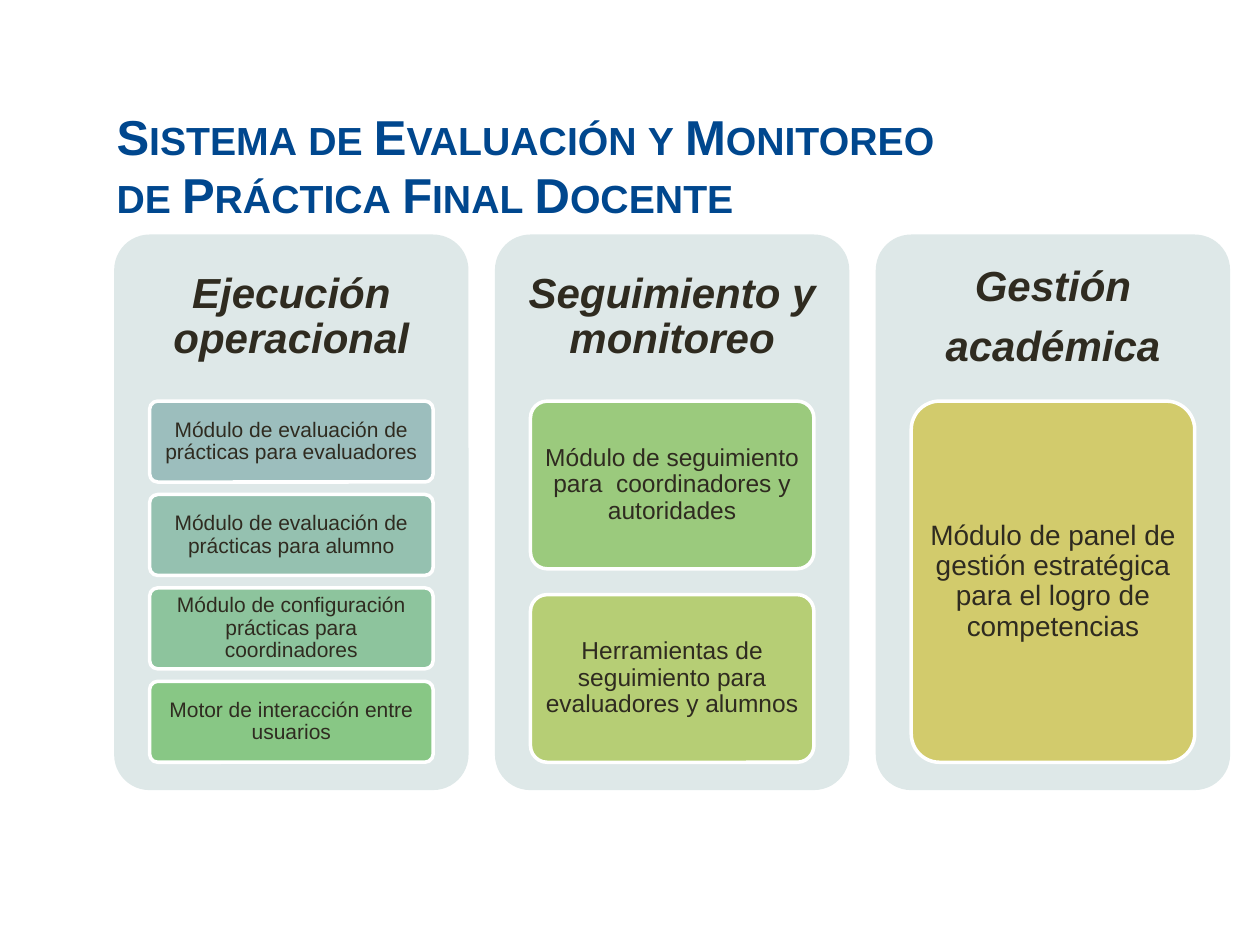
from pptx import Presentation
from pptx.dml.color import RGBColor
from pptx.enum.shapes import MSO_SHAPE
from pptx.enum.text import MSO_ANCHOR, PP_ALIGN
from pptx.util import Pt

BLUE = RGBColor(0x00, 0x47, 0x8E)
DARK = RGBColor(0x2F, 0x2B, 0x20)
PALE = RGBColor(0xDE, 0xE8, 0xE8)
WHITE = RGBColor(0xFF, 0xFF, 0xFF)

CARD_LEFT, CARD_TOP, CARD_STEP = 65.25, 134, 217.6
CARD_WIDTH, CARD_HEIGHT, HEADING_HEIGHT = 202.5, 317.5, 95
MODULE_INDENT, MODULE_WIDTH = 20.25, 162
MODULE_TOP, STACK_HEIGHT = 229.2, 206.4
GAP_RATIO = 2 / 13  # gap between modules, as a share of a module's height

# Heading lines, module text size, modules with their fills
COLUMNS = [
    (["Ejecución operacional"], 12, [
        ("Módulo de evaluación de prácticas para evaluadores", RGBColor(0x9C, 0xBE, 0xBD)),
        ("Módulo de evaluación de prácticas para alumno", RGBColor(0x95, 0xC1, 0xB0)),
        ("Módulo de configuración prácticas para coordinadores", RGBColor(0x8D, 0xC4, 0x9D)),
        ("Motor de interacción entre usuarios", RGBColor(0x88, 0xC7, 0x85)),
    ]),
    (["Seguimiento y monitoreo"], 14, [
        ("Módulo de seguimiento para  coordinadores y autoridades", RGBColor(0x9B, 0xCA, 0x7D)),
        ("Herramientas de seguimiento para evaluadores y alumnos", RGBColor(0xB6, 0xCE, 0x75)),
    ]),
    (["Gestión", "académica"], 16, [
        ("Módulo de panel de gestión estratégica para el logro de competencias",
         RGBColor(0xD2, 0xCB, 0x6C)),
    ]),
]


def add_rounded_box(left, top, width, height, fill):
    box = page.shapes.add_shape(
        MSO_SHAPE.ROUNDED_RECTANGLE, Pt(left), Pt(top), Pt(width), Pt(height))
    box.adjustments[0] = 0.1
    box.shadow.inherit = False
    box.fill.solid()
    box.fill.fore_color.rgb = fill
    box.line.fill.background()
    return box


def write_centred(box, lines, size, inset, emphasis=False):
    frame = box.text_frame
    frame.word_wrap = True
    frame.vertical_anchor = MSO_ANCHOR.MIDDLE
    frame.margin_left = frame.margin_right = Pt(inset)
    frame.margin_top = frame.margin_bottom = Pt(inset)
    frame.text = "\n".join(lines)
    for paragraph in frame.paragraphs:
        paragraph.alignment = PP_ALIGN.CENTER
        paragraph.line_spacing = 0.9
        paragraph.space_after = Pt(0.35 * size)
        paragraph.font.name = "Arial"
        paragraph.font.size = Pt(size)
        paragraph.font.bold = paragraph.font.italic = emphasis
        paragraph.font.color.rgb = DARK


deck = Presentation()
deck.slide_width, deck.slide_height = Pt(720), Pt(540)
page = deck.slides.add_slide(deck.slide_layouts[5])

title = page.shapes.title
title.left, title.top, title.width, title.height = Pt(59.4), Pt(57), Pt(481.7), Pt(108.7)
title.text_frame.text = "Sistema de Evaluación y Monitoreo de Práctica Final Docente"
title.text_frame.vertical_anchor = MSO_ANCHOR.TOP
title.text_frame.word_wrap = True
title.text_frame.margin_right = 0
paragraph = title.text_frame.paragraphs[0]
paragraph.alignment = PP_ALIGN.LEFT
paragraph.line_spacing = 1.0
span = paragraph.runs[0]
span.font.name = "Arial"
span.font.size = Pt(28)
span.font.bold = True
span.font.color.rgb = BLUE
span.font._element.set("cap", "small")

for column, (heading, size, modules) in enumerate(COLUMNS):
    left = CARD_LEFT + column * CARD_STEP
    add_rounded_box(left, CARD_TOP, CARD_WIDTH, CARD_HEIGHT, PALE)
    heading_box = page.shapes.add_textbox(
        Pt(left), Pt(CARD_TOP), Pt(CARD_WIDTH), Pt(HEADING_HEIGHT))
    write_centred(heading_box, heading, 24, 7.2, emphasis=True)

    count = len(modules)
    height = STACK_HEIGHT / (count + (count - 1) * GAP_RATIO)
    for row, (text, fill) in enumerate(modules):
        top = MODULE_TOP + row * height * (1 + GAP_RATIO)
        module = add_rounded_box(left + MODULE_INDENT, top, MODULE_WIDTH, height, fill)
        module.line.color.rgb = WHITE
        module.line.width = Pt(2)
        write_centred(module, [text], size, 3)

deck.save("out.pptx")
